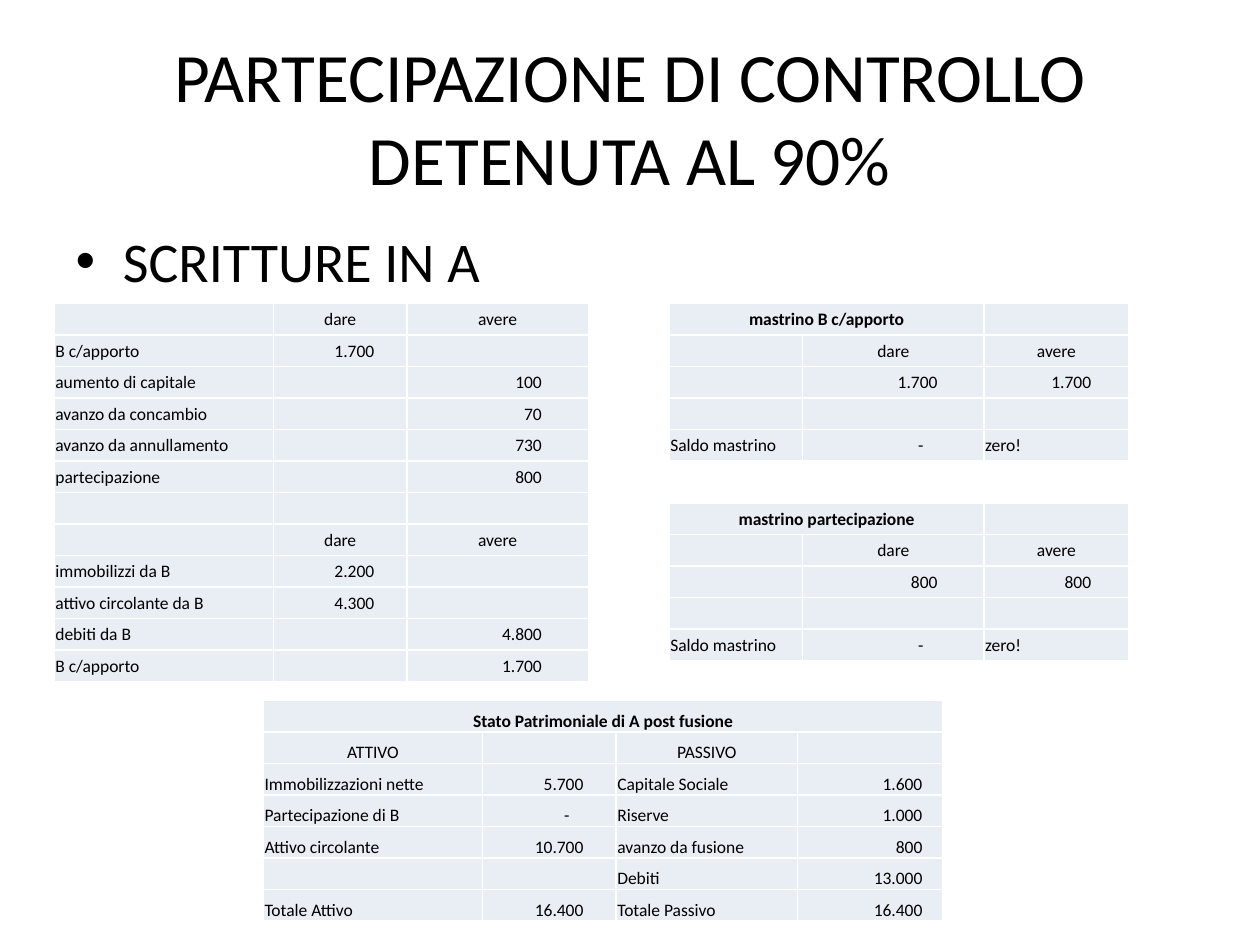
import pptx
import pptx.util
import pptx.dml.color
import pptx.enum.text
import pptx.oxml.ns
import lxml.etree

Inches, Pt = pptx.util.Inches, pptx.util.Pt
ALIGN = pptx.enum.text.PP_ALIGN
ANCHOR = pptx.enum.text.MSO_ANCHOR

BLACK = pptx.dml.color.RGBColor(0x00, 0x00, 0x00)
PALE_BLUE = pptx.dml.color.RGBColor(0xE9, 0xED, 0xF4)

# Grid: every table shares the row height and these column widths
ROW = 0.25
LABEL, DARE, AVERE, LAST = 1.74, 1.06, 1.44, 1.15
HEADINGS = {"dare", "avere", "ATTIVO", "PASSIVO"}
TABLE_FONT = {"name": "Calibri", "size": Pt(10)}


def set_format(target, values):
    for name, value in values.items():
        setattr(target, name, value)


def add_ledger(slide, left, top, columns, rows, insets, anchor=ANCHOR.MIDDLE, title_span=0):
    """Add a table; insets are the right margins of the numbers by column."""
    frame = slide.shapes.add_table(len(rows), len(columns), Inches(left), Inches(top),
                                   Inches(sum(columns)), Inches(ROW * len(rows)))
    table = frame.table
    set_format(table, {"first_row": False, "horz_banding": False})
    for column, width in zip(table.columns, columns):
        column.width = Inches(width)
    for row_index, values in enumerate(rows):
        table.rows[row_index].height = Inches(ROW)
        for column_index, value in enumerate(values):
            cell = table.cell(row_index, column_index)
            is_title = row_index == 0 and column_index < title_span
            is_number = value == "-" or value.replace(".", "").isdigit()
            right = 0.01
            if is_number:
                right = insets[column_index] + (0.11 if value == "-" else 0)
            set_format(cell, {"margin_left": Inches(0.01), "margin_top": Inches(0.01),
                              "margin_right": Inches(right), "margin_bottom": 0,
                              "vertical_anchor": anchor})
            cell.fill.solid()
            cell.fill.fore_color.rgb = PALE_BLUE
            paragraph = cell.text_frame.paragraphs[0]
            if not value:
                # Empty cells need the small size too, or the row grows
                lxml.etree.SubElement(paragraph._p, pptx.oxml.ns.qn("a:endParaRPr"), sz="1000")
                continue
            paragraph.alignment = (ALIGN.CENTER if is_title or value in HEADINGS
                                   else ALIGN.RIGHT if is_number else ALIGN.LEFT)
            run = paragraph.add_run()
            run.text = value
            set_format(run.font, {**TABLE_FONT, "bold": is_title})
            run.font.color.rgb = BLACK
    if title_span:
        table.cell(0, 0).merge(table.cell(0, title_span - 1))


presentation = pptx.Presentation()
presentation.slide_width, presentation.slide_height = Inches(10), Inches(7.5)
slide = presentation.slides.add_slide(presentation.slide_layouts[1])

# Title and list
for placeholder, text, size, top, height in (
    (slide.shapes.title, "PARTECIPAZIONE DI CONTROLLO DETENUTA AL 90%", 39.6, 0.3, 1.25),
    (slide.placeholders[1], "SCRITTURE IN A", 32, 1.75, 4.95),
):
    set_format(placeholder, {"left": Inches(0.5), "top": Inches(top),
                             "width": Inches(9), "height": Inches(height)})
    placeholder.text_frame.text = text
    placeholder.text_frame.auto_size = pptx.enum.text.MSO_AUTO_SIZE.NONE
    font = placeholder.text_frame.paragraphs[0].runs[0].font
    set_format(font, {"name": "Calibri", "size": Pt(size)})
    font.color.rgb = BLACK

# Journal entries
add_ledger(slide, 0.43, 2.41, (LABEL, DARE, AVERE), (
    ("", "dare", "avere"),
    ("B c/apporto", "1.700", ""),
    ("aumento di capitale", "", "100"),
    ("avanzo da concambio", "", "70"),
    ("avanzo da annullamento", "", "730"),
    ("partecipazione", "", "800"),
    ("", "", ""),
    ("", "dare", "avere"),
    ("immobilizzi da B", "2.200", ""),
    ("attivo circolante da B", "4.300", ""),
    ("debiti da B", "", "4.800"),
    ("B c/apporto", "", "1.700"),
), insets=(0, 0.26, 0.37))

# Ledger accounts
for top, account, amount in ((2.41, "B c/apporto", "1.700"),
                             (3.99, "partecipazione", "800")):
    add_ledger(slide, 5.31, top, (DARE, AVERE, LAST), (
        (f"mastrino {account}", "", ""),
        ("", "dare", "avere"),
        ("", amount, amount),
        ("", "", ""),
        ("Saldo mastrino", "-", "zero!"),
    ), insets=(0, 0.37, 0.3), title_span=2)

# Balance sheet after the merger
add_ledger(slide, 2.09, 5.56, (LABEL, DARE, AVERE, LAST), (
    ("Stato Patrimoniale di A post fusione", "", "", ""),
    ("ATTIVO", "", "PASSIVO", ""),
    ("Immobilizzazioni nette", "5.700", "Capitale Sociale", "1.600"),
    ("Partecipazione di B", "-", "Riserve", "1.000"),
    ("Attivo circolante", "10.700", "avanzo da fusione", "800"),
    ("", "", "Debiti", "13.000"),
    ("Totale Attivo", "16.400", "Totale Passivo", "16.400"),
), insets=(0, 0.26, 0, 0.16), anchor=ANCHOR.BOTTOM, title_span=4)

presentation.save("out.pptx")
